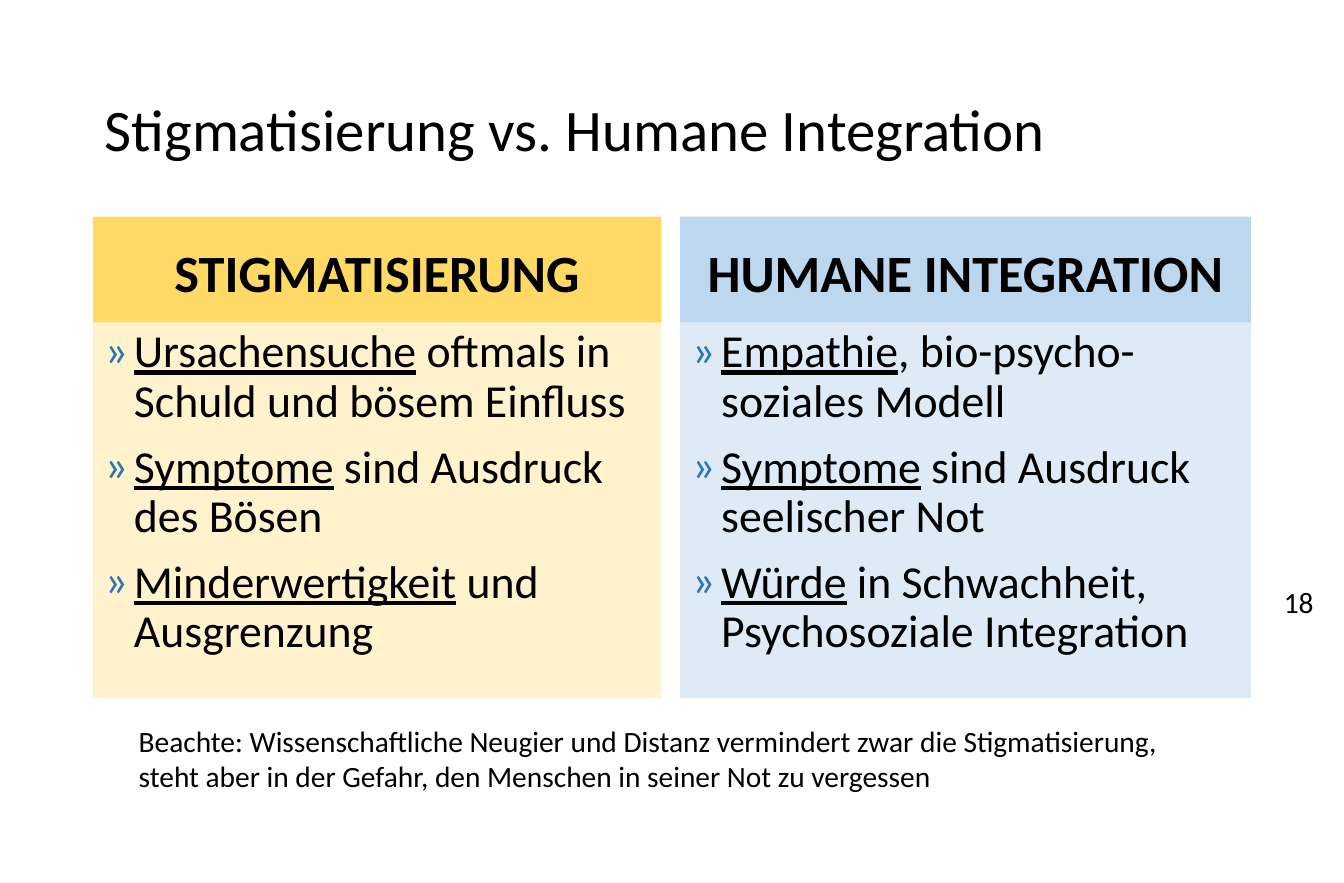
from dataclasses import dataclass

from lxml.etree import SubElement
from pptx import Presentation
from pptx.dml.color import RGBColor
from pptx.enum.shapes import MSO_SHAPE
from pptx.enum.text import MSO_ANCHOR, MSO_AUTO_SIZE, PP_ALIGN
from pptx.oxml.ns import qn
from pptx.util import Inches, Pt


@dataclass(frozen=True)
class Theme:
    font: str = "Calibri"
    text: str = "000000"
    bullet: str = "2E75B6"
    yellow: str = "FFD966"
    pale_yellow: str = "FFF2CC"
    blue: str = "BDD7EE"
    pale_blue: str = "DEEBF7"
    title_size: int = 36
    heading_size: int = 32
    point_size: int = 28
    note_size: int = 18


THEME = Theme()
COLUMN_TOP, HEADING_HEIGHT, POINTS_HEIGHT = 1.84, 0.9, 3.19

COLUMNS = [
    (0.79, 4.83, THEME.yellow, THEME.pale_yellow, "STIGMATISIERUNG", [
        ("Ursachensuche", " oftmals in Schuld und bösem Einfluss"),
        ("Symptome", " sind Ausdruck des Bösen"),
        ("Minderwertigkeit", " und Ausgrenzung"),
    ]),
    (5.78, 4.85, THEME.blue, THEME.pale_blue, "HUMANE INTEGRATION", [
        ("Empathie", ", bio-psycho-soziales Modell"),
        ("Symptome", " sind Ausdruck seelischer Not"),
        ("Würde", " in Schwachheit, Psychosoziale Integration"),
    ]),
]


def add_run(para, text, size, bold=False, underline=False):
    span = para.add_run()
    span.text = text
    span.font.name = THEME.font
    span.font.size = Pt(size)
    span.font.bold = bold
    span.font.underline = underline
    span.font.color.rgb = RGBColor.from_string(THEME.text)


def add_text(page, left, top, width, height, text, size):
    """Add a one-paragraph text box and return its text frame."""
    box = page.shapes.add_textbox(Inches(left), Inches(top), Inches(width), Inches(height))
    frame = box.text_frame
    frame.word_wrap = True
    add_run(frame.paragraphs[0], text, size)
    return frame


def add_panel(page, left, top, width, height, fill, anchor):
    """Add a borderless filled rectangle and return its text frame."""
    panel = page.shapes.add_shape(
        MSO_SHAPE.RECTANGLE, Inches(left), Inches(top), Inches(width), Inches(height))
    panel.shadow.inherit = False
    panel.fill.solid()
    panel.fill.fore_color.rgb = RGBColor.from_string(fill)
    panel.line.fill.background()
    frame = panel.text_frame
    frame.word_wrap = True
    frame.vertical_anchor = anchor
    return frame


def add_bullet(para):
    properties = para._p.get_or_add_pPr()
    properties.set("marL", str(Inches(0.25)))
    properties.set("indent", str(-Inches(0.25)))
    color = SubElement(properties, qn("a:buClr"))
    SubElement(color, qn("a:srgbClr"), val=THEME.bullet)
    SubElement(properties, qn("a:buFont"), typeface=THEME.font)
    SubElement(properties, qn("a:buChar"), char="»")


def add_heading(page, left, width, fill, text):
    frame = add_panel(page, left, COLUMN_TOP, width, HEADING_HEIGHT, fill, MSO_ANCHOR.BOTTOM)
    frame.margin_bottom = Inches(0.16)
    para = frame.paragraphs[0]
    para.alignment = PP_ALIGN.CENTER
    para.line_spacing = 0.9
    add_run(para, text, THEME.heading_size, bold=True)


def add_points(page, left, width, fill, points):
    frame = add_panel(page, left, COLUMN_TOP + HEADING_HEIGHT, width, POINTS_HEIGHT,
                      fill, MSO_ANCHOR.TOP)
    for index, (keyword, rest) in enumerate(points):
        para = frame.add_paragraph() if index else frame.paragraphs[0]
        add_bullet(para)
        para.alignment = PP_ALIGN.LEFT
        para.line_spacing = 0.9
        if index:
            para.space_before = Pt(10)
        add_run(para, keyword, THEME.point_size, underline=True)
        add_run(para, rest, THEME.point_size)


def main():
    deck = Presentation()
    deck.slide_width, deck.slide_height = Inches(11.42), Inches(7.5)
    page = deck.slides.add_slide(deck.slide_layouts[6])

    title = add_text(page, 0.79, 0.4, 9.85, 1.45,
                     "Stigmatisierung vs. Humane Integration", THEME.title_size)
    title.vertical_anchor = MSO_ANCHOR.MIDDLE
    title.paragraphs[0].line_spacing = 0.9

    for left, width, heading_fill, points_fill, heading, points in COLUMNS:
        add_heading(page, left, width, heading_fill, heading)
        add_points(page, left, width, points_fill, points)

    add_text(page, 10.81, 4.91, 0.62, 0.55, "18", THEME.note_size)
    note = add_text(
        page, 1.08, 6.09, 8.88, 0.71,
        "Beachte: Wissenschaftliche Neugier und Distanz vermindert zwar die Stigmatisierung, "
        "steht aber in der Gefahr, den Menschen in seiner Not zu vergessen", THEME.note_size)
    note.auto_size = MSO_AUTO_SIZE.SHAPE_TO_FIT_TEXT

    deck.save("out.pptx")


if __name__ == "__main__":
    main()
